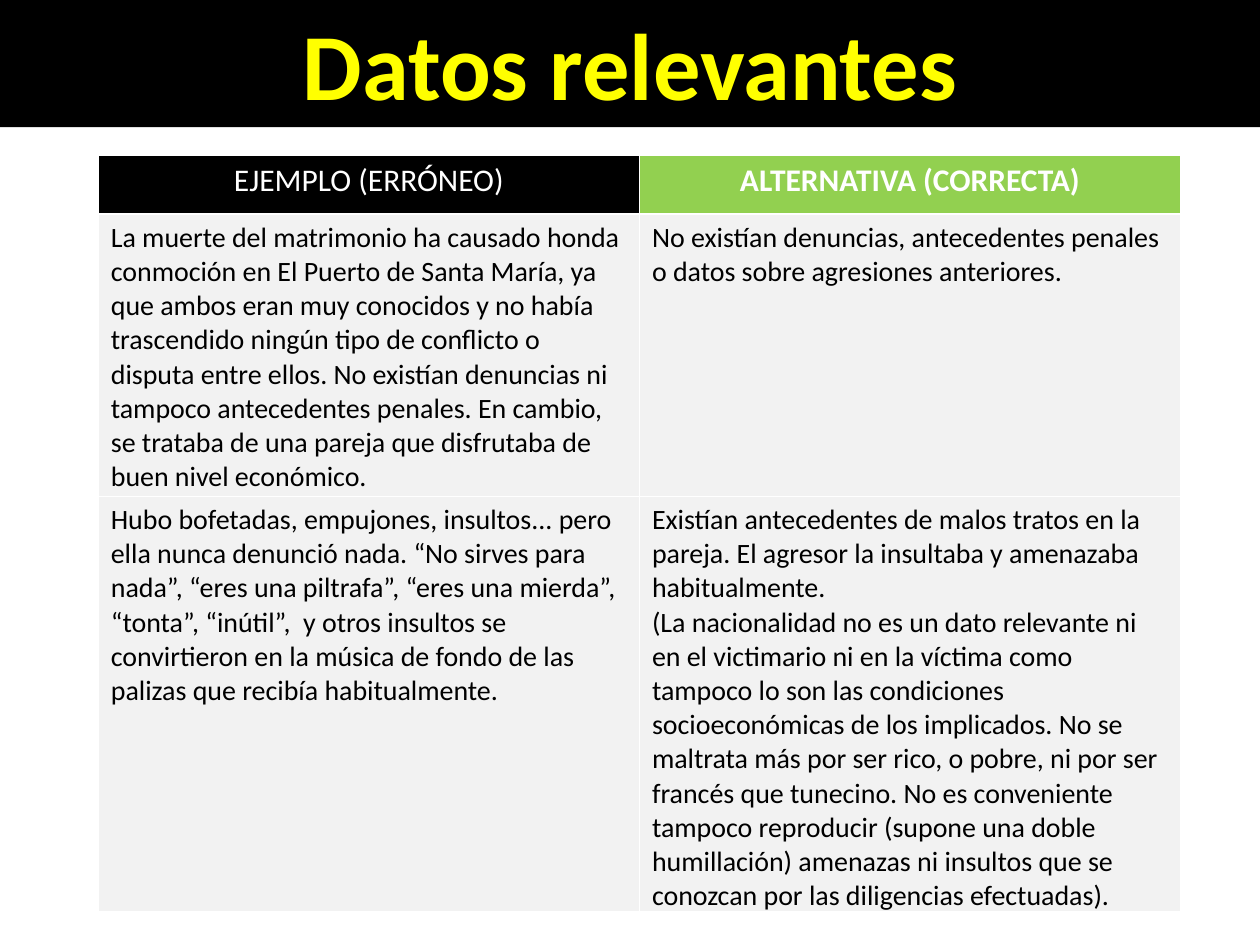
from pptx import Presentation
from pptx.dml.color import RGBColor
from pptx.enum import shapes, text
from pptx.util import Inches, Pt

COLORS = {
    "black": "000000",
    "white": "FFFFFF",
    "yellow": "FFFF00",
    "green": "92D050",
    "gray": "F2F2F2",
}

HEADERS = [
    ("EJEMPLO (ERRÓNEO)", "black", False),
    ("ALTERNATIVA (CORRECTA)", "green", True),
]

EXAMPLES = [
    (
        ["La muerte del matrimonio ha causado honda conmoción en El Puerto de Santa María, "
         "ya que ambos eran muy conocidos y no había trascendido ningún tipo de conflicto o "
         "disputa entre ellos. No existían denuncias ni tampoco antecedentes penales. En cambio, "
         "se trataba de una pareja que disfrutaba de buen nivel económico."],
        ["No existían denuncias, antecedentes penales o datos sobre agresiones anteriores."],
    ),
    (
        ["Hubo bofetadas, empujones, insultos... pero ella nunca denunció nada. “No sirves para "
         "nada”, “eres una piltrafa”, “eres una mierda”, “tonta”, “inútil”,  y otros insultos se "
         "convirtieron en la música de fondo de las palizas que recibía habitualmente."],
        ["Existían antecedentes de malos tratos en la pareja. El agresor la insultaba y amenazaba "
         "habitualmente.",
         "(La nacionalidad no es un dato relevante ni en el victimario ni en la víctima como tampoco "
         "lo son las condiciones socioeconómicas de los implicados. No se maltrata más por ser rico, "
         "o pobre, ni por ser francés que tunecino. No es conveniente tampoco reproducir (supone una "
         "doble humillación) amenazas ni insultos que se conozcan por las diligencias efectuadas)."],
    ),
]


class Deck:
    font = "Calibri"

    def __init__(self, width, height):
        self.prs = Presentation()
        self.prs.slide_width = Inches(width)
        self.prs.slide_height = Inches(height)
        self.slide = self.prs.slides.add_slide(self.prs.slide_layouts[6])

    def color(self, name):
        return RGBColor.from_string(COLORS[name])

    def paint(self, target, name):
        target.fill.solid()
        target.fill.fore_color.rgb = self.color(name)

    def add_text(self, tf, lines, size, color, bold=False, align=text.PP_ALIGN.LEFT):
        for i, line in enumerate(lines):
            p = tf.paragraphs[0] if i == 0 else tf.add_paragraph()
            p.alignment = align
            r = p.add_run()
            r.text = line
            r.font.name = self.font
            r.font.size = Pt(size)
            r.font.bold = bold
            r.font.color.rgb = self.color(color)

    def banner(self, title, width, height):
        sp = self.slide.shapes.add_shape(
            shapes.MSO_SHAPE.RECTANGLE, 0, 0, Inches(width), Inches(height))
        sp.shadow.inherit = False
        sp.line.fill.background()
        self.paint(sp, "black")
        tf = sp.text_frame
        tf.word_wrap = True
        tf.auto_size = text.MSO_AUTO_SIZE.SHAPE_TO_FIT_TEXT
        tf.vertical_anchor = text.MSO_ANCHOR.TOP
        self.add_text(tf, [title], 54, "yellow", True, text.PP_ALIGN.CENTER)

    def table(self, left, top, width, heights, headers, rows):
        table = self.slide.shapes.add_table(
            len(heights), len(headers), Inches(left), Inches(top),
            Inches(width), Inches(sum(heights))).table
        table.horz_banding = False
        for row, height in zip(table.rows, heights):
            row.height = Inches(height)
        for col, (label, background, bold) in enumerate(headers):
            cell = table.cell(0, col)
            self.paint(cell, background)
            self.add_text(cell.text_frame, [label], 18, "white", bold, text.PP_ALIGN.CENTER)
        for row, entries in enumerate(rows, 1):
            for col, lines in enumerate(entries):
                cell = table.cell(row, col)
                self.paint(cell, "gray")
                self.add_text(cell.text_frame, lines, 16, "black")


def main():
    deck = Deck(10, 7.5)
    deck.banner("Datos relevantes", 10, 1.01)
    deck.table(0.78, 1.23, 8.59, [0.47, 2.24, 3.3], HEADERS, EXAMPLES)
    deck.prs.save("out.pptx")


if __name__ == "__main__":
    main()
